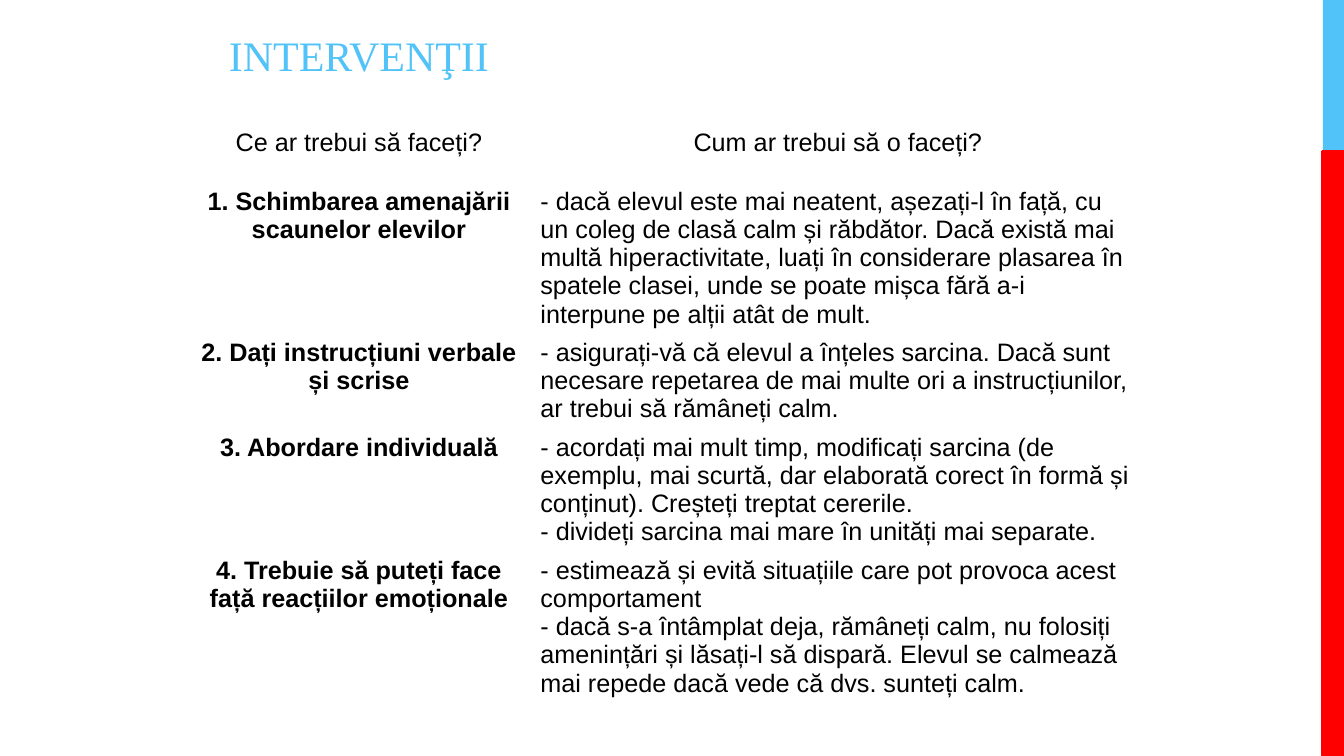
"""Build the slide that pairs classroom interventions with ways to carry them out."""
from pptx import Presentation
from pptx.dml.color import RGBColor
from pptx.enum.shapes import MSO_SHAPE
from pptx.enum.text import MSO_ANCHOR, PP_ALIGN
from pptx.util import Pt

PX = 9144
RECTANGLE = MSO_SHAPE.RECTANGLE
MIDDLE = MSO_ANCHOR.MIDDLE
LEFT, CENTER = PP_ALIGN.LEFT, PP_ALIGN.CENTER
SKY = RGBColor(0x51, 0xC3, 0xF9)
RED = RGBColor(0xFF, 0x00, 0x00)
BLACK = RGBColor(0x00, 0x00, 0x00)

COLUMN_WIDTHS = (340, 610)
ROW_HEIGHTS = (58, 140, 90, 103, 128)
INTERVENTIONS = (
    ("Ce ar trebui să faceți?", "Cum ar trebui să o faceți?"),
    ("1. Schimbarea amenajării scaunelor elevilor",
     "- dacă elevul este mai neatent, așezați-l în față, cu un coleg de clasă calm și "
     "răbdător. Dacă există mai multă hiperactivitate, luați în considerare plasarea în "
     "spatele clasei, unde se poate mișca fără a-i interpune pe alții atât de mult."),
    ("2. Dați instrucțiuni verbale și scrise",
     "- asigurați-vă că elevul a înțeles sarcina. Dacă sunt necesare repetarea de mai "
     "multe ori a instrucțiunilor, ar trebui să rămâneți calm."),
    ("3. Abordare individuală",
     "- acordați mai mult timp, modificați sarcina (de exemplu, mai scurtă, dar elaborată "
     "corect în formă și conținut). Creșteți treptat cererile.\n"
     "- divideți sarcina mai mare în unități mai separate."),
    ("4. Trebuie să puteți face față reacțiilor emoționale",
     "- estimează și evită situațiile care pot provoca acest comportament\n"
     "- dacă s-a întâmplat deja, rămâneți calm, nu folosiți amenințări și lăsați-l să "
     "dispară. Elevul se calmează mai repede dacă vede că dvs. sunteți calm."),
)


def box(left, top, width, height):
    """Turn a box in px into EMU."""
    return [length * PX for length in (left, top, width, height)]


def style_text(frame, font_name, size, color, align, bold=False):
    """Format every paragraph and run of a text frame."""
    for paragraph in frame.paragraphs:
        paragraph.alignment = align
        for run in paragraph.runs:
            run.font.name = font_name
            run.font.size = Pt(size)
            run.font.bold = bold
            run.font.color.rgb = color


def set_title(slide, text):
    """Place and format the slide title."""
    title = slide.shapes.title
    title.left, title.top, title.width, title.height = box(217, 21, 633, 75)
    frame = title.text_frame
    frame.text = text
    frame.vertical_anchor = MIDDLE
    frame.paragraphs[0].line_spacing = 0.8
    style_text(frame, "Times New Roman", 30, SKY, LEFT)


def add_edge_band(slide, top, height, color, line_width=0):
    """Add one coloured band along the right edge."""
    band = slide.shapes.add_shape(RECTANGLE, *box(1312, top, 21, height))
    band.shadow.inherit = False
    band.fill.solid()
    band.fill.fore_color.rgb = color
    if line_width:
        band.line.color.rgb = color
        band.line.width = Pt(line_width)
    else:
        band.line.fill.background()


def add_interventions(slide):
    """Add the borderless table of interventions."""
    table = slide.shapes.add_table(
        len(ROW_HEIGHTS), len(COLUMN_WIDTHS),
        *box(186, 123, sum(COLUMN_WIDTHS), sum(ROW_HEIGHTS))).table
    table.first_row = False
    table.horz_banding = False
    for column, width in zip(table.columns, COLUMN_WIDTHS):
        column.width = width * PX
    for row, height in zip(table.rows, ROW_HEIGHTS):
        row.height = height * PX
    for row_index, texts in enumerate(INTERVENTIONS):
        is_header = row_index == 0
        for column_index, text in enumerate(texts):
            is_action = column_index == 0
            cell = table.cell(row_index, column_index)
            cell.fill.background()
            cell.text_frame.text = text
            align = CENTER if is_header or is_action else LEFT
            style_text(cell.text_frame, "Arial", 18, BLACK, align,
                       bold=is_action and not is_header)


def main():
    """Create and save the presentation."""
    presentation = Presentation()
    presentation.slide_width = 1333 * PX
    presentation.slide_height = 750 * PX
    slide = presentation.slides.add_slide(presentation.slide_layouts[5])
    add_edge_band(slide, 0, 150, SKY)
    add_edge_band(slide, 150, 600, RED, line_width=2.25)
    set_title(slide, "INTERVENŢII")
    add_interventions(slide)
    presentation.save("out.pptx")


if __name__ == "__main__":
    main()
